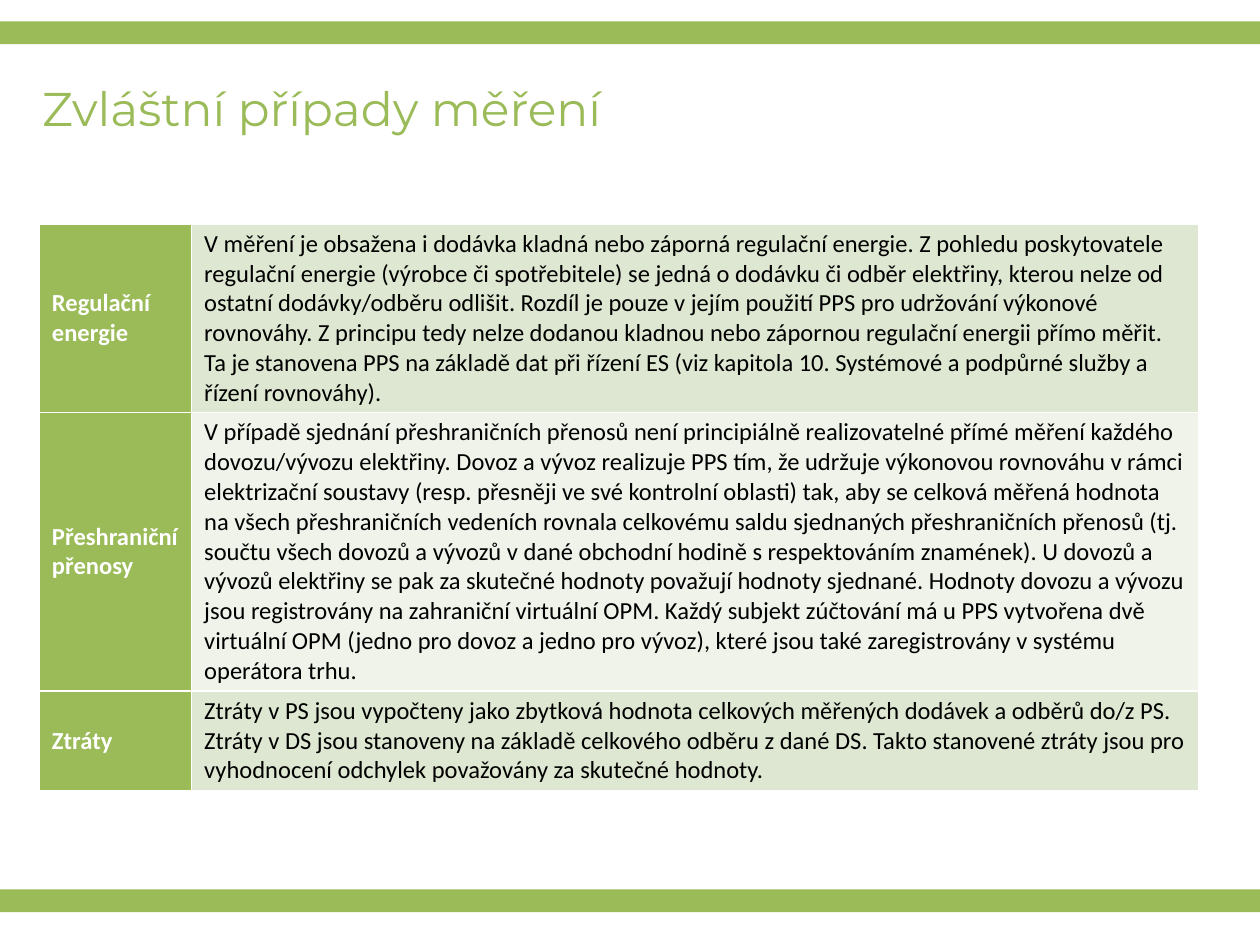
from dataclasses import dataclass

from lxml.etree import SubElement
from pptx import Presentation
from pptx.dml.color import RGBColor
from pptx.enum.shapes import MSO_SHAPE as Preset
from pptx.enum.text import MSO_ANCHOR as Anchor, MSO_AUTO_SIZE as AutoSize, PP_ALIGN as Align
from pptx.oxml.ns import qn
from pptx.util import Pt

GREEN = "9BBB59"
WHITE = "FFFFFF"
BLACK = "000000"
BANDS = ("DEE7D1", "EFF3EA")
PAGE_WIDTH = 720
PAGE_HEIGHT = 540
BAR_HEIGHT = 13
BAR_TOPS = (12.25, 508.25)
COLUMN_WIDTHS = (87, 575.5)
CELL_MARGINS = {
    "margin_left": Pt(7.2),
    "margin_right": Pt(7.2),
    "margin_top": Pt(2.5),
    "margin_bottom": Pt(2.5),
    "vertical_anchor": Anchor.MIDDLE,
}


@dataclass
class SpecialCase:
    name: str
    description: str
    height: float


CASES = [
    SpecialCase(
        "Regulační energie",
        "V měření je obsažena i dodávka kladná nebo záporná regulační energie. "
        "Z pohledu poskytovatele regulační energie (výrobce či spotřebitele) se jedná o dodávku "
        "či odběr elektřiny, kterou nelze od ostatní dodávky/odběru odlišit. Rozdíl je pouze "
        "v jejím použití PPS pro udržování výkonové rovnováhy. Z principu tedy nelze dodanou "
        "kladnou nebo zápornou regulační energii přímo měřit. Ta je stanovena PPS na základě dat "
        "při řízení ES (viz kapitola 10. Systémové a podpůrné služby a řízení rovnováhy).",
        107.5,
    ),
    SpecialCase(
        "Přeshraniční přenosy",
        "V případě sjednání přeshraničních přenosů není principiálně realizovatelné přímé měření "
        "každého dovozu/vývozu elektřiny. Dovoz a vývoz realizuje PPS tím, že udržuje výkonovou "
        "rovnováhu v rámci elektrizační soustavy (resp. přesněji ve své kontrolní oblasti) tak, "
        "aby se celková měřená hodnota na všech přeshraničních vedeních rovnala celkovému saldu "
        "sjednaných přeshraničních přenosů (tj. součtu všech dovozů a vývozů v dané obchodní "
        "hodině s respektováním znamének). U dovozů a vývozů elektřiny se pak za skutečné hodnoty "
        "považují hodnoty sjednané. Hodnoty dovozu a vývozu jsou registrovány na zahraniční "
        "virtuální OPM. Každý subjekt zúčtování má u PPS vytvořena dvě virtuální OPM (jedno pro "
        "dovoz a jedno pro vývoz), které jsou také zaregistrovány v systému operátora trhu.",
        159,
    ),
    SpecialCase(
        "Ztráty",
        "Ztráty v PS jsou vypočteny jako zbytková hodnota celkových měřených dodávek a odběrů "
        "do/z PS. Ztráty v DS jsou stanoveny na základě celkového odběru z dané DS. Takto "
        "stanovené ztráty jsou pro vyhodnocení odchylek považovány za skutečné hodnoty.",
        57,
    ),
]


def color(value: str) -> RGBColor:
    return RGBColor.from_string(value)


def apply(target, values: dict) -> None:
    for name, value in values.items():
        setattr(target, name, value)


def write(frame, text: str, font: str, size: float, ink: str, bold: bool = False) -> None:
    para = frame.paragraphs[0]
    para.alignment = Align.LEFT
    span = para.add_run()
    span.text = text
    apply(span.font, {"name": font, "size": Pt(size), "bold": bold})
    span.font.color.rgb = color(ink)


def draw_bar(page, top: float) -> None:
    bar = page.shapes.add_shape(Preset.RECTANGLE, 0, Pt(top), Pt(PAGE_WIDTH), Pt(BAR_HEIGHT))
    bar.shadow.inherit = False
    bar.fill.solid()
    bar.fill.fore_color.rgb = color(GREEN)
    bar.line.fill.background()


def draw_title(page, text: str) -> None:
    title = page.shapes.title
    apply(title, {"left": Pt(24), "top": Pt(45.5), "width": Pt(576), "height": Pt(32.5)})
    frame = title.text_frame
    sides = ("left", "right", "top", "bottom")
    apply(frame, {f"margin_{side}": 0 for side in sides})
    apply(frame, {
        "vertical_anchor": Anchor.MIDDLE,
        "word_wrap": True,
        "auto_size": AutoSize.SHAPE_TO_FIT_TEXT,
    })
    write(frame, text, "Montserrat", 27, GREEN)


def add_borders(cell, ink: str, width: float) -> None:
    properties = cell._tc.get_or_add_tcPr()
    for position, side in enumerate(("lnL", "lnR", "lnT", "lnB")):
        border = SubElement(properties, qn(f"a:{side}"), w=str(Pt(width)))
        fill = SubElement(border, qn("a:solidFill"))
        SubElement(fill, qn("a:srgbClr"), val=ink)
        properties.insert(position, border)


def fill_cell(cell, text: str, fill: str, ink: str, bold: bool) -> None:
    apply(cell, CELL_MARGINS)
    cell.fill.solid()
    cell.fill.fore_color.rgb = color(fill)
    add_borders(cell, WHITE, 1)
    write(cell.text_frame, text, "Calibri", 14, ink, bold)


def draw_table(page, cases: list[SpecialCase]) -> None:
    height = sum(case.height for case in cases)
    holder = page.shapes.add_table(
        len(cases), len(COLUMN_WIDTHS), Pt(22.5), Pt(128.25), Pt(sum(COLUMN_WIDTHS)), Pt(height)
    )
    table = holder.table
    apply(table, {"first_row": False, "horz_banding": False})
    for column, width in zip(table.columns, COLUMN_WIDTHS):
        column.width = Pt(width)
    for index, case in enumerate(cases):
        table.rows[index].height = Pt(case.height)
        fill_cell(table.cell(index, 0), case.name, GREEN, WHITE, True)
        fill_cell(table.cell(index, 1), case.description, BANDS[index % 2], BLACK, False)


def main() -> None:
    deck = Presentation()
    apply(deck, {"slide_width": Pt(PAGE_WIDTH), "slide_height": Pt(PAGE_HEIGHT)})
    page = deck.slides.add_slide(deck.slide_layouts[5])
    for top in BAR_TOPS:
        draw_bar(page, top)
    draw_title(page, "Zvláštní případy měření")
    draw_table(page, CASES)
    deck.save("out.pptx")


if __name__ == "__main__":
    main()
